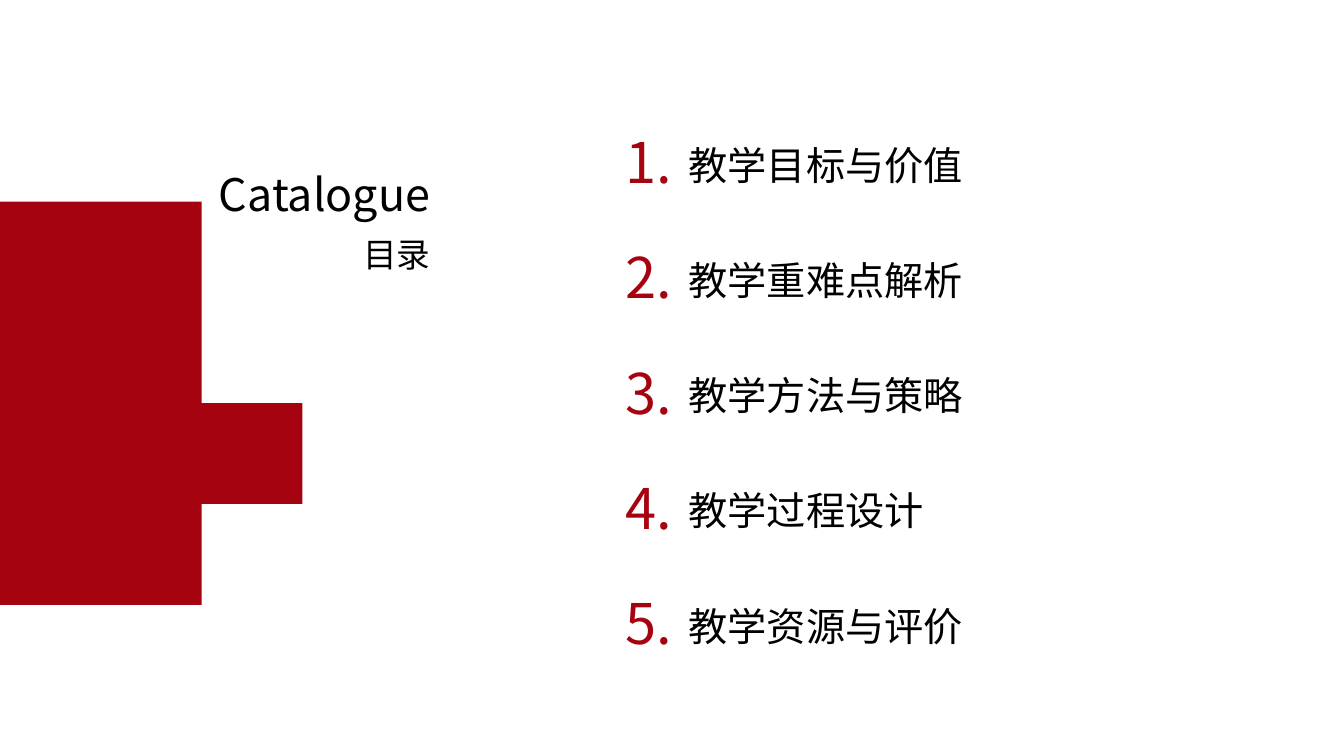
import pptx
import pptx.util
import pptx.dml.color
import pptx.enum.shapes
import pptx.enum.text
import pptx.oxml.ns
from lxml import etree

Inches = pptx.util.Inches
ALIGN = pptx.enum.text.PP_ALIGN
ANCHOR = pptx.enum.text.MSO_ANCHOR
FIT = pptx.enum.text.MSO_AUTO_SIZE
FONT = "Noto Sans CJK SC"
RED, BLACK, WHITE, PALE = "A60311", "000000", "FFFFFF", "FAFAFA"


def paint(fill, color):
    fill.solid()
    fill.fore_color.rgb = pptx.dml.color.RGBColor.from_string(color)


def write(sp, box, text, size, color=BLACK, align=ALIGN.LEFT,
          anchor=ANCHOR.MIDDLE, fit=FIT.SHAPE_TO_FIT_TEXT):
    """Place sp at box (inches) and fill it with one formatted run."""
    for name, value in zip(("left", "top", "width", "height"), box):
        setattr(sp, name, Inches(value))
    tf = sp.text_frame
    frame = {"margin_left": 0, "margin_top": 0, "margin_right": 0, "margin_bottom": 0,
             "word_wrap": True, "vertical_anchor": anchor, "auto_size": fit}
    for name, value in frame.items():
        setattr(tf, name, value)
    p = tf.paragraphs[0]
    p.alignment = align
    r = p.add_run()
    r.text = text
    r.font.size = pptx.util.Pt(size)
    r.font.name = FONT
    paint(r.font.fill, color)
    ea = etree.SubElement(r.font._element, pptx.oxml.ns.qn("a:ea"))
    ea.set("typeface", FONT)


prs = pptx.Presentation()
prs.slide_width, prs.slide_height = Inches(13.33), Inches(7.5)
s = prs.slides.add_slide(prs.slide_layouts[5])
paint(s.background.fill, PALE)

# White page, behind the title placeholder
page = s.shapes.add_shape(pptx.enum.shapes.MSO_SHAPE.RECTANGLE, 0, 0,
                          prs.slide_width, prs.slide_height)
page.shadow.inherit = False
page.line.fill.background()
paint(page.fill, WHITE)
s.shapes._spTree.insert(2, page._element)

# Headings share a right edge
write(s.shapes.title, (1.49, 1.7, 2.78, 0.44), "Catalogue", 32, align=ALIGN.RIGHT)
write(s.shapes.add_textbox(0, 0, 0, 0), (3.58, 2.36, 0.69, 0.33), "目录", 24,
      align=ALIGN.RIGHT)

# Rounded triangle: three cubic corners joined by straight sides
corners = [
    ((1.73, 5.54), (2.53, 5.54), (2.88, 4.96), (2.5, 4.26)),
    ((1.5, 2.42), (1.12, 1.72), (0.49, 1.72), (0.11, 2.42)),
    ((-0.88, 4.26), (-1.26, 4.96), (-0.92, 5.54), (-0.12, 5.54)),
]
STEPS = 32
outline = []
for corner in corners:
    for i in range(STEPS + 1):
        t = i / STEPS
        weights = ((1 - t) ** 3, 3 * t * (1 - t) ** 2, 3 * t * t * (1 - t), t ** 3)
        outline.append([sum(w * pt[axis] for w, pt in zip(weights, corner))
                        for axis in (0, 1)])
builder = s.shapes.build_freeform(*outline[0], scale=Inches(1))
builder.add_line_segments(outline[1:], close=True)
triangle = builder.convert_to_shape()
triangle.shadow.inherit = False
triangle.line.fill.background()
paint(triangle.fill, RED)

# Numbered contents at an even pitch
TOP, PITCH = 1.33, 1.143
items = ["教学目标与价值", "教学重难点解析", "教学方法与策略", "教学过程设计", "教学资源与评价"]
for i, item in enumerate(items):
    y = TOP + i * PITCH
    write(s.shapes.add_textbox(0, 0, 0, 0), (6.2, y, 0.63, 0.54), f"{i + 1}.", 40,
          color=RED, fit=FIT.NONE)
    write(s.shapes.add_textbox(0, 0, 0, 0), (6.83, y + 0.07, 5.9, 0.39), item, 28,
          anchor=ANCHOR.TOP)

prs.save("out.pptx")
